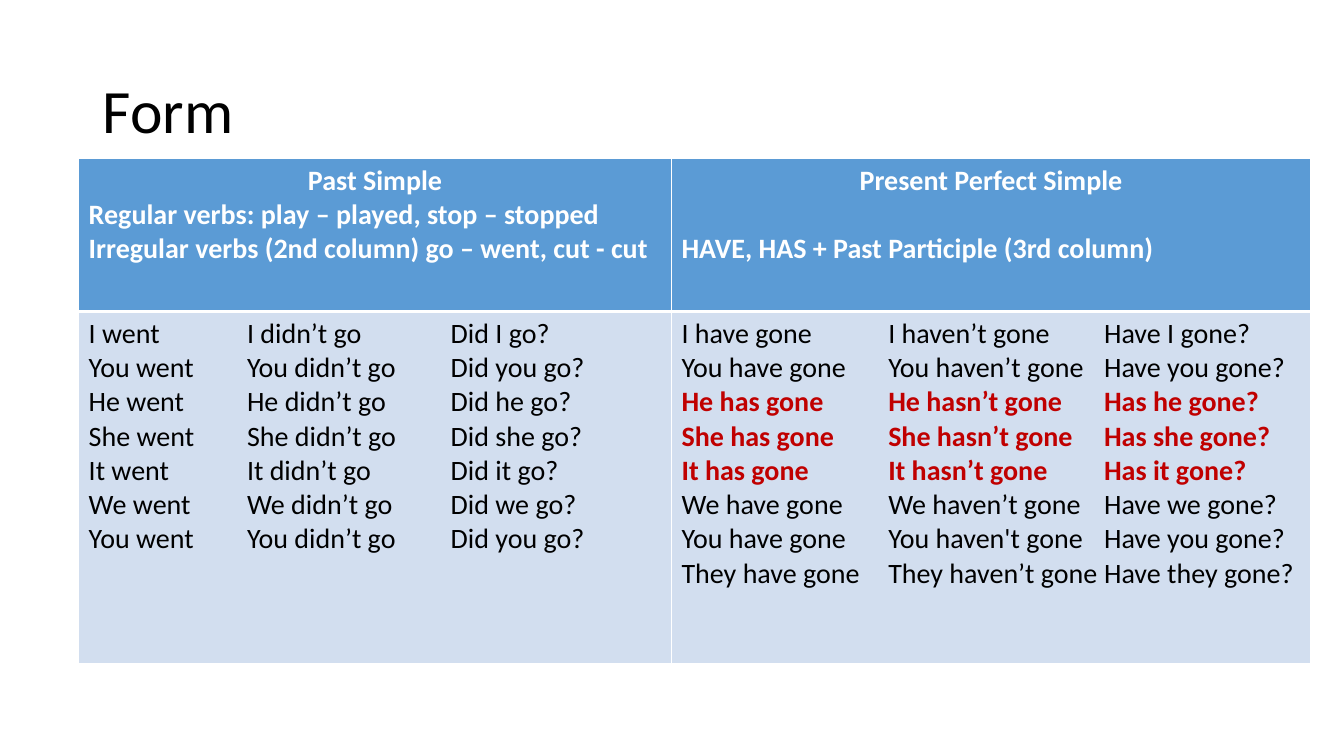
from lxml import etree
from pptx import Presentation
from pptx.dml.color import RGBColor
from pptx.enum.text import MSO_ANCHOR, PP_ALIGN
from pptx.oxml.ns import qn
from pptx.util import Pt

CENTER = PP_ALIGN.CENTER
LEFT = PP_ALIGN.LEFT
MIDDLE = MSO_ANCHOR.MIDDLE
PX = 9144  # EMU, 100 px to the inch
FONT = "Calibri"
COLORS = {"black": "000000", "white": "FFFFFF", "red": "C00000",
          "header": "5B9BD5", "body": "D2DEEF"}

HEADER = {"size": 20, "bold": True, "color": "white"}
HEADING = {**HEADER, "align": CENTER}
BODY = {"size": 20, "bold": False, "color": "black"}
THIRD_PERSON = {**BODY, "bold": True, "color": "red"}

PAST_HEADER = [
    ("Past Simple", HEADING),
    ("Regular verbs: play – played, stop – stopped", HEADER),
    ("Irregular verbs (2nd column) go – went, cut - cut", HEADER),
]
PERFECT_HEADER = [
    ("Present Perfect Simple", {**HEADING, "space_after": 24.4}),
    ("HAVE, HAS + Past Participle (3rd column)", HEADER),
]
PAST_FORMS = [
    ("I went", "I didn’t go", "Did I go?"),
    ("You went", "You didn’t go", "Did you go?"),
    ("He went", "He didn’t go", "Did he go?"),
    ("She went", "She didn’t go", "Did she go?"),
    ("It went", "It didn’t go", "Did it go?"),
    ("We went", "We didn’t go", "Did we go?"),
    ("You went", "You didn’t go", "Did you go?"),
]
PERFECT_FORMS = [
    ("I have gone", "I haven’t gone", "Have I gone?"),
    ("You have gone", "You haven’t gone", "Have you gone?"),
    ("He has gone", "He hasn’t gone", "Has he gone?"),
    ("She has gone", "She hasn’t gone", "Has she gone?"),
    ("It has gone", "It hasn’t gone", "Has it gone?"),
    ("We have gone", "We haven’t gone", "Have we gone?"),
    ("You have gone", "You haven't gone", "Have you gone?"),
    ("They have gone", "They haven’t gone", "Have they gone?"),
]


def conjugation(forms, tabs):
    """Return tabbed lines, with the 'has' forms highlighted."""
    return [("\t".join(row),
             {**(THIRD_PERSON if " has " in row[0] else BODY), "tabs": tabs})
            for row in forms]


class Deck:
    def __init__(self, width, height):
        self.prs = Presentation()
        self.prs.slide_width = width * PX
        self.prs.slide_height = height * PX
        self.s = self.prs.slides.add_slide(self.prs.slide_layouts[6])

    def paragraphs(self, tf, lines):
        """Fill a text frame with (text, format) paragraphs."""
        tf.word_wrap = True
        for i, (text, fmt) in enumerate(lines):
            p = tf.paragraphs[0] if i == 0 else tf.add_paragraph()
            p.alignment = fmt.get("align", LEFT)
            p.line_spacing = fmt.get("line_spacing", 1.0)
            p.space_after = Pt(fmt.get("space_after", 0))
            if "tabs" in fmt:
                self.tab_stops(p, fmt["tabs"])
            r = p.add_run()
            r.text = text
            font = {"name": FONT, "size": Pt(fmt["size"]), "bold": fmt["bold"]}
            for name, value in font.items():
                setattr(r.font, name, value)
            r.font.color.rgb = RGBColor.from_string(COLORS[fmt["color"]])

    def tab_stops(self, p, tabs):
        tab_list = etree.SubElement(p._p.get_or_add_pPr(), qn("a:tabLst"))
        for pos in tabs:
            etree.SubElement(tab_list, qn("a:tab"), pos=str(pos * PX), algn="l")

    def text(self, x, y, w, h, lines):
        tf = self.s.shapes.add_textbox(x * PX, y * PX, w * PX, h * PX).text_frame
        tf.vertical_anchor = MIDDLE
        self.paragraphs(tf, lines)

    def borders(self, cell, widths):
        """Draw white cell borders, widths in points by side."""
        tc_pr = cell._tc.get_or_add_tcPr()
        for side, width in widths.items():
            ln = etree.SubElement(tc_pr, qn(f"a:ln{side}"), w=str(Pt(width)))
            fill = etree.SubElement(ln, qn("a:solidFill"))
            etree.SubElement(fill, qn("a:srgbClr"), val=COLORS["white"])

    def table(self, x, y, cols, rows, cells, fills, edges):
        table = self.s.shapes.add_table(
            len(rows), len(cols), x * PX, y * PX,
            sum(cols) * PX, sum(rows) * PX).table
        for col, width in zip(table.columns, cols):
            col.width = width * PX
        for i, height in enumerate(rows):
            table.rows[i].height = height * PX
            for j, lines in enumerate(cells[i]):
                cell = table.cell(i, j)
                self.borders(cell, edges[i])
                cell.fill.solid()
                cell.fill.fore_color.rgb = RGBColor.from_string(COLORS[fills[i]])
                self.paragraphs(cell.text_frame, lines)


def main():
    deck = Deck(1333, 750)
    deck.text(92, 40, 1150, 145, [
        ("Form", {"size": 44, "bold": False, "color": "black", "line_spacing": 0.9})])
    deck.table(
        78, 157, cols=[588, 634], rows=[152, 349],
        cells=[[PAST_HEADER, PERFECT_HEADER],
               [conjugation(PAST_FORMS, [157, 359]),
                conjugation(PERFECT_FORMS, [205, 419])]],
        fills=["header", "body"],
        edges=[{"L": 1, "R": 1, "T": 1, "B": 3}, {"L": 1, "R": 1, "T": 3, "B": 1}])
    deck.prs.save("out.pptx")


if __name__ == "__main__":
    main()
